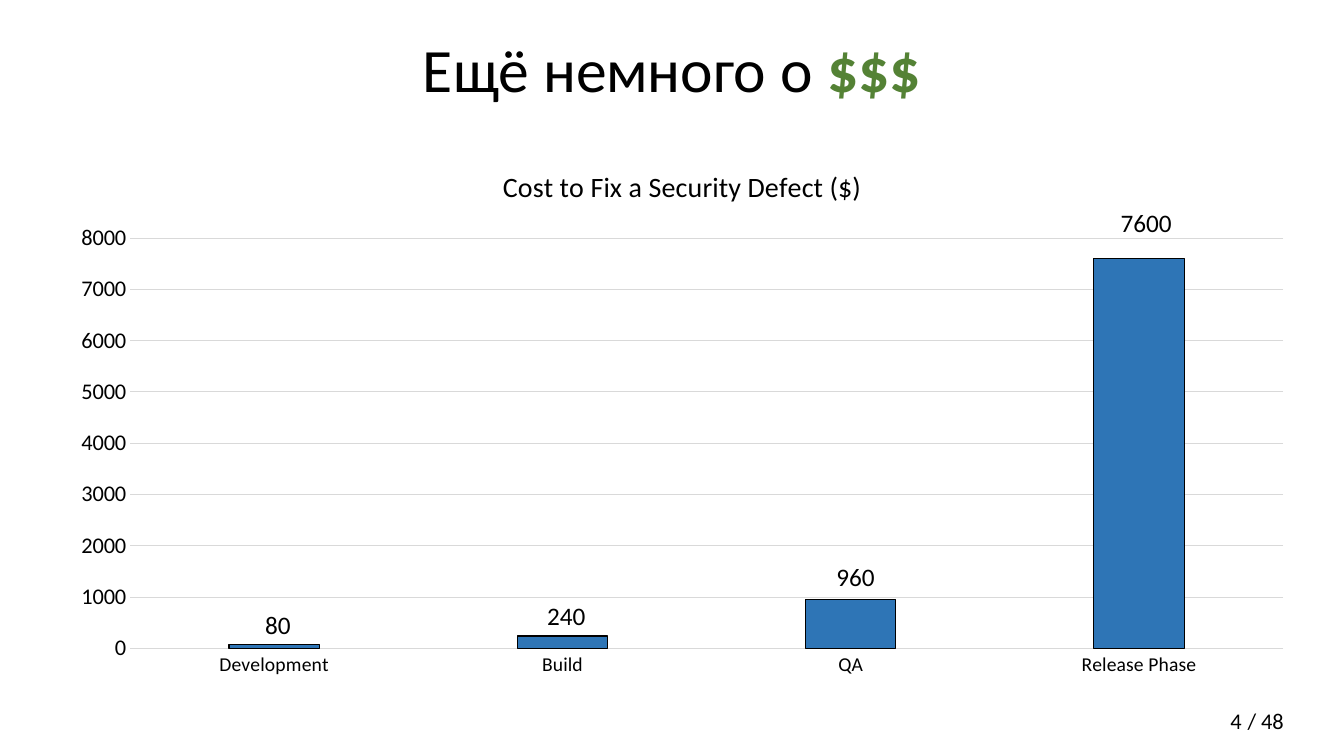
"""Build a slide with a column chart of the cost to fix a security defect."""
from pptx import Presentation
from pptx import util as u
from pptx.chart.data import CategoryChartData
from pptx.dml.color import RGBColor
from pptx.enum import chart as ch, text

FONT = "Calibri"
TITLE = "Cost to Fix a Security Defect ($)"
COSTS = {"Development": 80, "Build": 240, "QA": 960, "Release Phase": 7600}


def style(font, size, color="000000", bold=False):
    font.name, font.size, font.bold = FONT, u.Pt(size), bold
    font.color.rgb = RGBColor.from_string(color)


def add_text(s, box, runs, align=text.PP_ALIGN.LEFT, anchor=text.MSO_ANCHOR.TOP, wrap=False):
    tf = s.shapes.add_textbox(*map(u.Cm, box)).text_frame
    tf.word_wrap = wrap
    tf.vertical_anchor = anchor
    p = tf.paragraphs[0]
    p.alignment = align
    for words, *look in runs:
        r = p.add_run()
        r.text = words
        style(r.font, *look)
    return p


prs = Presentation()
prs.slide_width, prs.slide_height = u.Cm(33.87), u.Cm(19.05)
s = prs.slides.add_slide(prs.slide_layouts[6])

add_text(s, (31.19, 17.7, 1.45, 0.94), [("/ 48", 16)])

data = CategoryChartData()
data.categories = list(COSTS)
data.add_series(TITLE, list(COSTS.values()))
chart = s.shapes.add_chart(ch.XL_CHART_TYPE.COLUMN_CLUSTERED, u.Cm(1.42), u.Cm(3.68),
                           u.Cm(31.55), u.Cm(13.64), data).chart
style(chart.font, 10)
chart.has_legend = False
chart.has_title = True
r = chart.chart_title.text_frame.paragraphs[0].add_run()
r.text = TITLE
style(r.font, 20)
chart.chart_title.include_in_layout = False

plot = chart.plots[0]
plot.gap_width, plot.overlap, plot.vary_by_categories = 219, -27, False
bars = plot.series[0].format
bars.fill.solid()
bars.fill.fore_color.rgb = RGBColor.from_string("2E75B6")
bars.line.color.rgb = RGBColor.from_string("000000")
bars.line.width = u.Pt(0.75)

cat, val = chart.category_axis, chart.value_axis
for axis, size in ((cat, 14), (val, 16)):
    style(axis.tick_labels.font, size)
    axis.major_tick_mark = axis.minor_tick_mark = ch.XL_TICK_MARK.NONE
val.minimum_scale, val.maximum_scale, val.major_unit = 0, 8000, 1000
val.has_major_gridlines = True
val.format.line.fill.background()
for line in (cat.format.line, val.major_gridlines.format.line):
    line.color.rgb = RGBColor.from_string("D9D9D9")
    line.width = u.Pt(0.75)

p = add_text(s, (2.33, 0, 29.21, 3.68), [("Ещё немного о ", 44), ("$$$", 44, "548235", True)],
             text.PP_ALIGN.CENTER, text.MSO_ANCHOR.MIDDLE, True)
p.line_spacing = 0.9
add_text(s, (23.92, 17.65, 7.62, 1.01), [("4", 16)],
         text.PP_ALIGN.RIGHT, text.MSO_ANCHOR.MIDDLE, True)

spots = ((6.43, 15.24, 1.17), (13.54, 15.01, 1.5), (20.83, 14.02, 1.5), (27.99, 5.11, 1.8))
for cost, (left, top, width) in zip(COSTS.values(), spots):
    add_text(s, (left, top, width, 1.02), [(str(cost), 18)])

prs.save("out.pptx")
